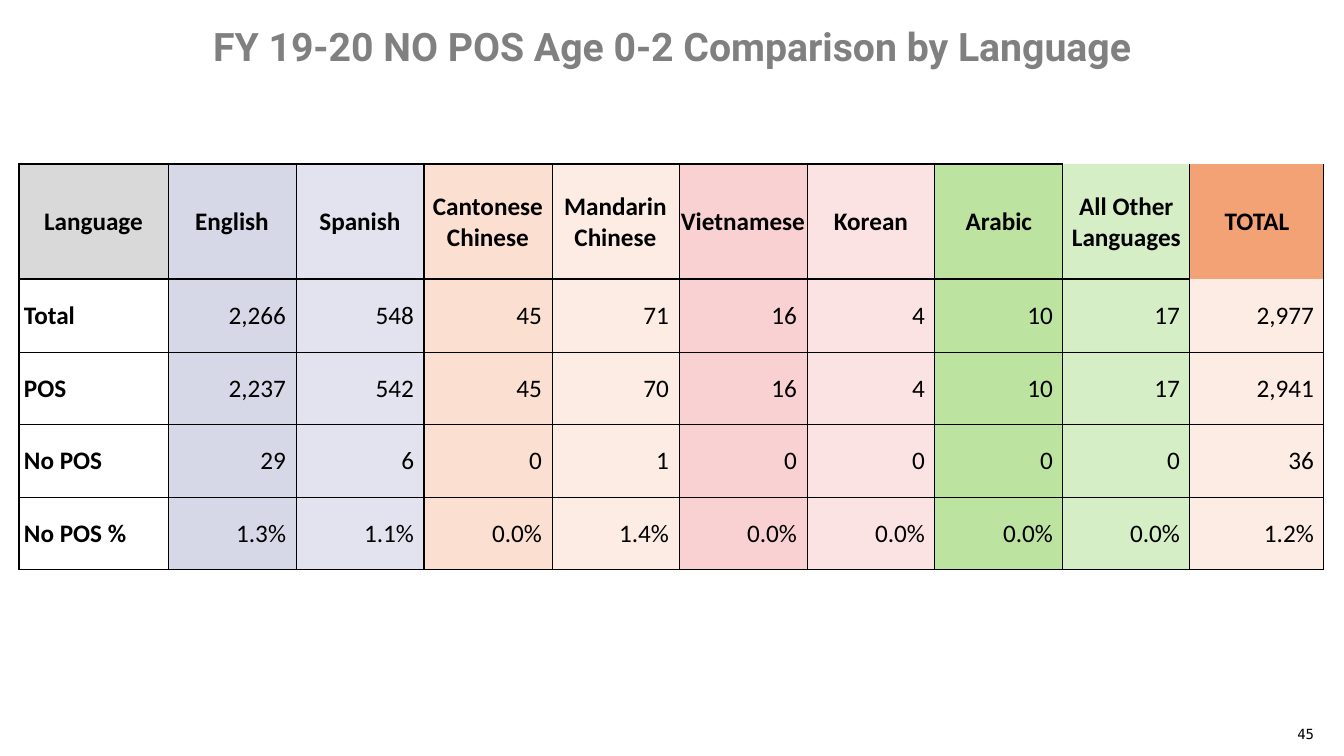
from lxml import etree
from pptx import Presentation
from pptx.dml.color import RGBColor
from pptx.enum.text import MSO_ANCHOR, PP_ALIGN
from pptx.oxml.ns import qn
from pptx.util import Pt

MIDDLE, BOTTOM = MSO_ANCHOR.MIDDLE, MSO_ANCHOR.BOTTOM
LEFT, CENTER, RIGHT = PP_ALIGN.LEFT, PP_ALIGN.CENTER, PP_ALIGN.RIGHT
TITLE_ONLY = 5
EMU_PER_PX = 914400 / 100.8

ROWS = [
    ["Language", "English", "Spanish", "Cantonese\nChinese", "Mandarin\nChinese",
     "Vietnamese", "Korean", "Arabic", "All Other\nLanguages", "TOTAL"],
    ["Total", "2,266", "548", "45", "71", "16", "4", "10", "17", "2,977"],
    ["POS", "2,237", "542", "45", "70", "16", "4", "10", "17", "2,941"],
    ["No POS", "29", "6", "0", "1", "0", "0", "0", "0", "36"],
    ["No POS %", "1.3%", "1.1%", "0.0%", "1.4%", "0.0%", "0.0%", "0.0%", "0.0%", "1.2%"],
]
WIDTHS = [149] + [128, 128, 128, 127] * 2 + [134]
HEIGHTS = [115] + [73, 72] * 2
# Fill colour and opacity in percent for each column
FILLS = [("FFFFFF", 100), ("D7D8E7", 100), ("D7D8E7", 70), ("FBE0D1", 100),
         ("FBE0D1", 60), ("F9D1D3", 100), ("F9D1D3", 60), ("BCE4A0", 100),
         ("BCE4A0", 60), ("FBE0D1", 60)]
HEAD_FILLS = {0: ("D9D9D9", 100), 9: ("F3A276", 100)}
THICK_EDGES = {0, 3, 7, 8, 9, 10}


def px(n):
    return round(n * EMU_PER_PX)


def rgb(code):
    return RGBColor.from_string(code)


def rule(row, col):
    """Width in points of the line above a cell; 0 means no line."""
    if row > 1:
        return 0.5
    return 2 if col < 8 + row else 0


def edge(n):
    """Width in points of the n-th vertical line."""
    return 1 if n in THICK_EDGES else 0.5


class Deck:
    font, ink, size = "Calibri", "000000", 18

    def __init__(self):
        self.file = Presentation()
        self.file.slide_width, self.file.slide_height = px(1344), px(756)
        self.slide = self.file.slides.add_slide(self.file.slide_layouts[TITLE_ONLY])

    def label(self, frame, text, align, size=size, font=font, color=ink, bold=False):
        frame.text = text
        frame.word_wrap = True
        for para in frame.paragraphs:
            para.alignment = align
            for run in para.runs:
                run.font.name, run.font.size, run.font.bold = font, Pt(size), bold
                run.font.color.rgb = rgb(color)

    def title(self, text, box):
        shape = self.slide.shapes.title
        shape.left, shape.top, shape.width, shape.height = map(px, box)
        self.label(shape.text_frame, text, CENTER, 28, "Roboto", "808080", True)
        shape.text_frame.vertical_anchor = MIDDLE

    def number(self, text, box):
        frame = self.slide.shapes.add_textbox(*map(px, box)).text_frame
        self.label(frame, text, RIGHT, 10, "DejaVu Sans Mono")
        frame.vertical_anchor = BOTTOM

    def border(self, cell, side, width):
        props = cell._tc.get_or_add_tcPr()
        line = etree.SubElement(props, qn(f"a:ln{side}"), w=str(int(Pt(width))))
        if width:
            fill = etree.SubElement(line, qn("a:solidFill"))
            etree.SubElement(fill, qn("a:srgbClr"), val=self.ink)
        else:
            etree.SubElement(line, qn("a:noFill"))

    def paint(self, cell, color, alpha):
        cell.fill.solid()
        cell.fill.fore_color.rgb = rgb(color)
        if alpha < 100:
            tone = cell._tc.tcPr.find(qn("a:solidFill") + "/" + qn("a:srgbClr"))
            etree.SubElement(tone, qn("a:alpha"), val=str(alpha * 1000))

    def cell(self, cell, row, col, text):
        head, first = row == 0, col == 0
        align = CENTER if head else LEFT if first else RIGHT
        self.label(cell.text_frame, text, align, bold=head or first)
        cell.vertical_anchor = MIDDLE
        cell.margin_left = px(5 if first and not head else 1)
        cell.margin_right = px(1 if head or first else 10)
        cell.margin_top, cell.margin_bottom = px(1), 0
        lines = {"L": edge(col), "R": edge(col + 1),
                 "T": rule(row, col), "B": rule(row + 1, col)}
        for side, width in lines.items():
            self.border(cell, side, width)
        fill = HEAD_FILLS.get(col, FILLS[col]) if head else FILLS[col]
        self.paint(cell, *fill)

    def table(self, rows, left, top):
        box = (left, top, sum(WIDTHS), sum(HEIGHTS))
        grid = self.slide.shapes.add_table(len(rows), len(WIDTHS), *map(px, box)).table
        grid.first_row = grid.horz_banding = False
        for col, width in zip(grid.columns, WIDTHS):
            col.width = px(width)
        for line, height in zip(grid.rows, HEIGHTS):
            line.height = px(height)
        for r, texts in enumerate(rows):
            for c, text in enumerate(texts):
                self.cell(grid.cell(r, c), r, c, text)


def main():
    deck = Deck()
    deck.title("FY 19-20 NO POS Age 0-2 Comparison by Language", (0, 0, 1344, 91))
    deck.number("45", (1271, 707, 53, 40))
    deck.table(ROWS, 19, 164)
    deck.file.save("out.pptx")


if __name__ == "__main__":
    main()
